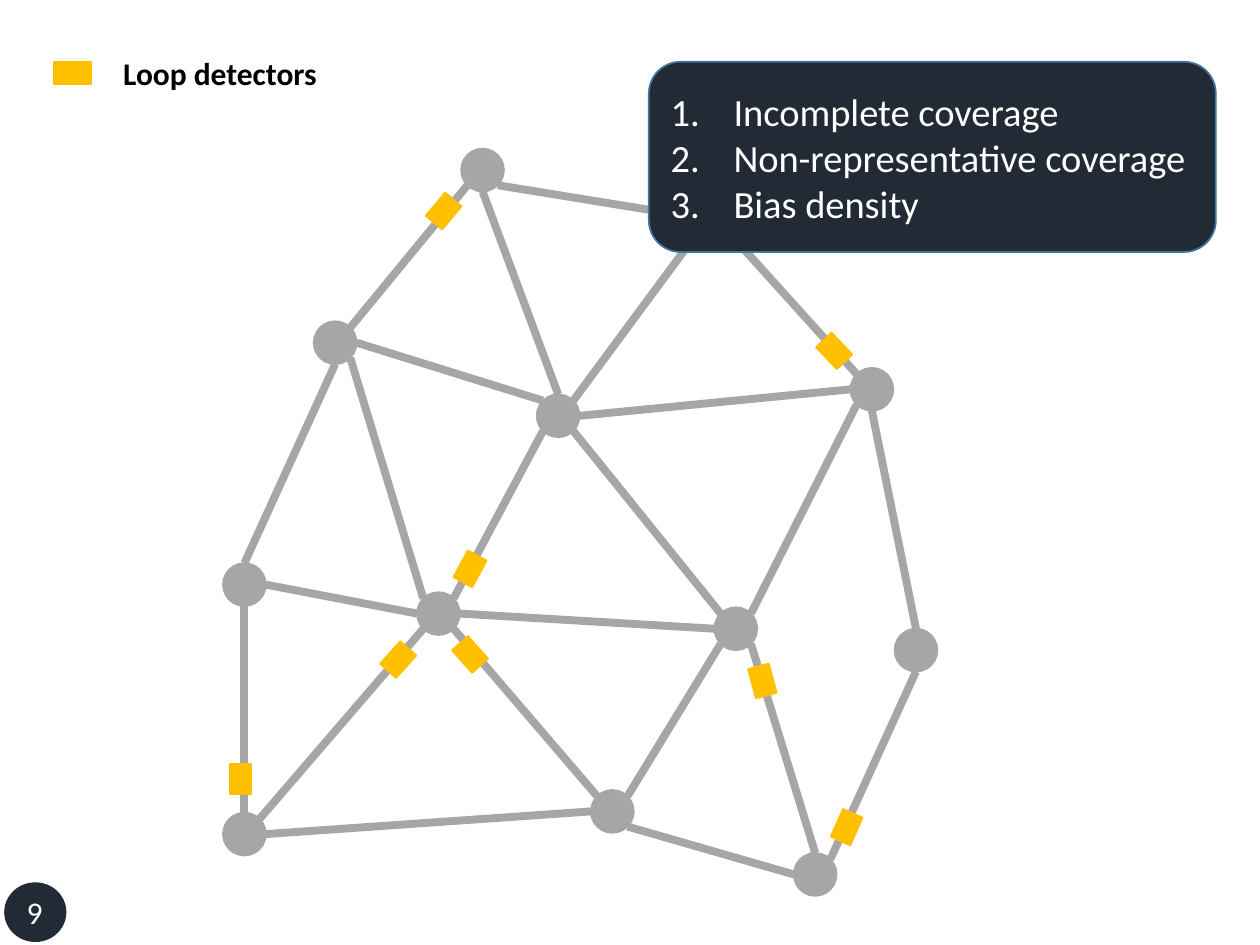
from math import cos, radians, sin

from lxml import etree
from pptx import Presentation
from pptx.dml.color import RGBColor
from pptx.enum.shapes import MSO_CONNECTOR, MSO_SHAPE
from pptx.enum.text import MSO_ANCHOR, PP_ALIGN
from pptx.oxml.ns import qn
from pptx.util import Pt

OVAL = MSO_SHAPE.OVAL
RECTANGLE = MSO_SHAPE.RECTANGLE
ROUNDED = MSO_SHAPE.ROUNDED_RECTANGLE
STRAIGHT = MSO_CONNECTOR.STRAIGHT
MIDDLE = MSO_ANCHOR.MIDDLE
LEFT, CENTER = PP_ALIGN.LEFT, PP_ALIGN.CENTER

PX = 9144
FONT = "Calibri"
COLORS = {
    "road": "A6A6A6",
    "detector": "FFC000",
    "dark": "222A35",
    "border": "43739E",
    "white": "FFFFFF",
    "black": "000000",
}

NODE_SIZE = 34
NODES = {
    "west": (194, 464),
    "southwest": (194, 662),
    "northwest": (266, 272),
    "inner left": (348, 487),
    "center": (443, 330),
    "southeast": (647, 694),
    "east": (727, 516),
    "north": (383, 135),
    "northeast": (692, 309),
    "inner right": (584, 499),
    "south": (486, 644),
}
COVERED = {"covered": (566, 172)}

ANGLES = {"E": 0, "SE": 45, "S": 90, "SW": 135, "W": 180, "NW": 225, "N": 270, "NE": 315}
ROADS = [
    ("southwest", "N", "west", "S"),
    ("west", "N", "northwest", "S"),
    ("northwest", "NE", "north", "SW"),
    ("inner left", "W", "west", "E"),
    ("inner left", "SW", "southwest", "NE"),
    ("south", "W", "southwest", "E"),
    ("south", "NW", "inner left", "SE"),
    ("southeast", "W", "south", "SE"),
    ("center", "N", "north", "S"),
    ("inner left", "NW", "northwest", "SE"),
    ("center", "SW", "inner left", "NE"),
    ("center", "NW", "northwest", "E"),
    ("inner right", "NW", "center", "SE"),
    ("south", "NE", "inner right", "SW"),
    ("southeast", "N", "inner right", "SE"),
    ("east", "S", "southeast", "NE"),
    ("east", "N", "northeast", "S"),
    ("inner right", "W", "inner left", "E"),
    ("north", "SE", "covered", "W"),
    ("covered", "SW", "center", "NE"),
    ("northeast", "NW", "covered", "SE"),
    ("northeast", "W", "center", "E"),
    ("northeast", "SW", "inner right", "NE"),
]

DETECTOR_SIZE = (24, 17)
DETECTORS = [
    (340, 159, 130),
    (650, 270, 46.5),
    (593, 532, 74.9),
    (660, 648, 293.9),
    (361, 511, 48.2),
    (361, 443, 118.4),
    (304, 515, 311.9),
    (179, 610, 270),
]

LEGEND = "Loop detectors"
PROBLEMS = ["Incomplete coverage", "Non-representative coverage", "Bias density"]
PAGE_NUMBER = "9"


def emu(*lengths):
    return [round(length * PX) for length in lengths]


def color(name):
    return RGBColor.from_string(COLORS[name])


def add_shape(kind, frame, fill, line=None, rotation=0):
    shape = page.shapes.add_shape(kind, *emu(*frame))
    shape.shadow.inherit = False
    shape.fill.solid()
    shape.fill.fore_color.rgb = color(fill)
    shape.line.color.rgb = color(line or fill)
    shape.line.width = Pt(1)
    shape.rotation = rotation
    return shape


def write(frame, lines, size, ink, bold=False, align=LEFT):
    frame.word_wrap = True
    frame.text = "\n".join(lines)
    for para in frame.paragraphs:
        para.alignment = align
        for span in para.runs:
            span.font.name = FONT
            span.font.size = Pt(size)
            span.font.bold = bold
            span.font.color.rgb = color(ink)


def add_label(frame, text, **style):
    box = page.shapes.add_textbox(*emu(*frame))
    write(box.text_frame, [text], 18, **style)


def node_edge(node, side):
    x, y = (NODES | COVERED)[node]
    angle = radians(ANGLES[side])
    return emu(x + NODE_SIZE / 2 * cos(angle), y + NODE_SIZE / 2 * sin(angle))


def add_road(start, start_side, end, end_side):
    road = page.shapes.add_connector(
        STRAIGHT, *node_edge(start, start_side), *node_edge(end, end_side))
    road.line.color.rgb = color("road")
    road.line.width = Pt(4.5)
    etree.SubElement(road._element.spPr, qn("a:effectLst"))


def number_paragraphs(frame, indent):
    for para in frame.paragraphs:
        properties = para._p.get_or_add_pPr()
        properties.set("marL", str(indent))
        properties.set("indent", str(-indent))
        etree.SubElement(properties, qn("a:buFont"), typeface="+mj-lt")
        etree.SubElement(properties, qn("a:buAutoNum"), type="arabicPeriod")


deck = Presentation()
deck.slide_width, deck.slide_height = emu(1000, 750)
page = deck.slides.add_slide(deck.slide_layouts[6])

for x, y in NODES.values():
    add_shape(OVAL, (x - NODE_SIZE / 2, y - NODE_SIZE / 2, NODE_SIZE, NODE_SIZE), "road")
for road_ends in ROADS:
    add_road(*road_ends)
for left, top, turn in DETECTORS:
    add_shape(RECTANGLE, (left, top, *DETECTOR_SIZE), "detector", rotation=turn)

add_shape(RECTANGLE, (43, 49, 29, 18), "detector")
add_label((88, 38, 207, 40), LEGEND, ink="black", bold=True)

panel = add_shape(ROUNDED, (515, 49, 450, 151), "dark", "border")
panel.text_frame.vertical_anchor = MIDDLE
write(panel.text_frame, PROBLEMS, 22, "white")
number_paragraphs(panel.text_frame, 50 * PX)

add_shape(OVAL, (4, 701, 48, 46), "dark")
add_label((2, 704, 51, 40), PAGE_NUMBER, ink="white", align=CENTER)

deck.save("out.pptx")
